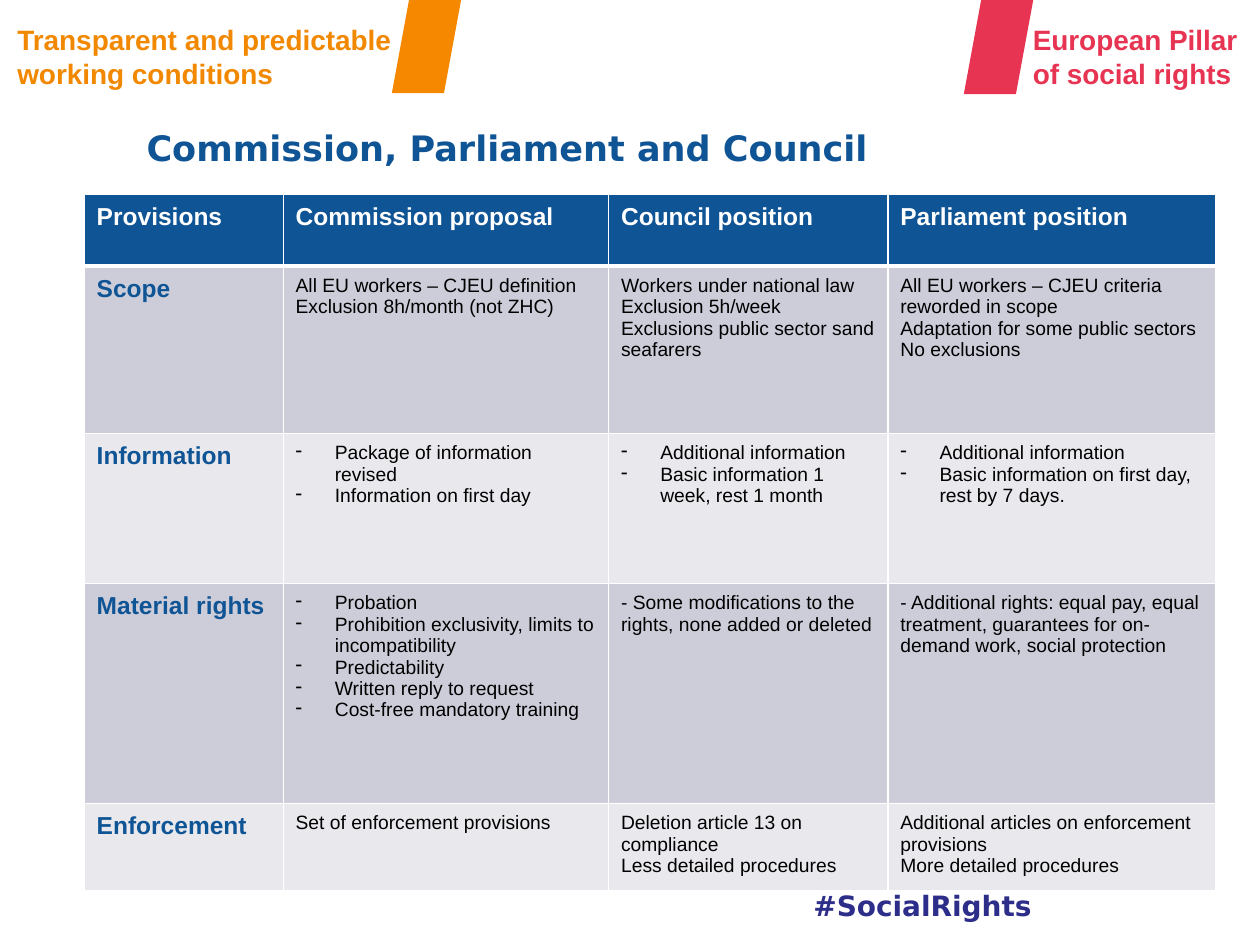
from dataclasses import dataclass

from lxml.etree import SubElement
from pptx import Presentation
from pptx.dml.color import RGBColor
from pptx.enum.shapes import MSO_SHAPE
from pptx.enum.text import MSO_ANCHOR, PP_ALIGN
from pptx.oxml.ns import qn
from pptx.util import Cm, Pt


@dataclass(frozen=True)
class Theme:
    body_font: str = "Arial"
    display_font: str = "DejaVu Sans"
    blue: str = "0F5494"
    navy: str = "2D2D8A"
    orange: str = "F18800"
    orange_bar: str = "F68800"
    red: str = "E73452"
    white: str = "FFFFFF"
    black: str = "000000"
    bands: tuple = ("CDCDDA", "E8E8ED")
    title_size: int = 20
    banner_size: int = 16
    heading_size: int = 14
    cell_size: int = 11


THEME = Theme()

TITLE = "Commission, Parliament and Council"
# text, font, colour, (left, top, width, height) in cm, wraps
LABELS = [
    ("#SocialRights", THEME.display_font, THEME.navy, (16.15, 17.78, 4.95, 0.94), False),
    ("Transparent and predictable working conditions", THEME.body_font, THEME.orange,
     (0.1, 0.33, 8.71, 1.63), True),
    ("European Pillar of social rights", THEME.body_font, THEME.red,
     (20.57, 0.33, 5, 1.63), True),
]
# left, top in cm, colour
BARS = [(7.9, -0.02, THEME.orange_bar), (19.43, 0, THEME.red)]
BAR_WIDTH, BAR_HEIGHT = 1.4, 1.9

HEADINGS = ["Provisions", "Commission proposal", "Council position", "Parliament position"]
# provision, whether each cell is a dashed list, lines of each cell
PROVISIONS = [
    ("Scope", (False, False, False), [
        ["All EU workers – CJEU definition", "Exclusion 8h/month (not ZHC)"],
        ["Workers under national law", "Exclusion 5h/week",
         "Exclusions public sector sand seafarers"],
        ["All EU workers – CJEU criteria reworded in scope",
         "Adaptation for some public sectors", "No exclusions"],
    ]),
    ("Information", (True, True, True), [
        ["Package of information revised", "Information on first day"],
        ["Additional information", "Basic information 1 week, rest 1 month"],
        ["Additional information", "Basic information on first day, rest by 7 days."],
    ]),
    ("Material rights", (True, False, False), [
        ["Probation", "Prohibition exclusivity, limits to incompatibility",
         "Predictability", "Written reply to request", "Cost-free mandatory training"],
        ["- Some modifications to the rights, none added or deleted"],
        ["- Additional rights: equal pay, equal treatment, guarantees for on-demand work, "
         "social protection"],
    ]),
    ("Enforcement", (False, False, False), [
        ["Set of enforcement provisions"],
        ["Deletion article 13 on compliance", "Less detailed procedures"],
        ["Additional articles on enforcement provisions", "More detailed procedures"],
    ]),
]
TABLE_LEFT, TABLE_TOP = 1.7, 3.91
COLUMN_WIDTHS = [4.01, 6.56, 5.63, 6.61]
ROW_HEIGHTS = [1.45, 3.38, 3.02, 4.44, 1.62]
DASH_INDENT = 0.79


def style(para, font, size, colour, bold=True):
    para.font.name = font
    para.font.size = Pt(size)
    para.font.bold = bold
    para.font.color.rgb = RGBColor.from_string(colour)


def indent(para, left, dash=False):
    """Indent a paragraph; with dash, hang a dash in the indent."""
    props = para._p.get_or_add_pPr()
    props.set("marL", str(Cm(left)))
    props.set("indent", str(-Cm(left) if dash else 0))
    if dash:
        SubElement(props, qn("a:buChar"), char="-")


def add_borders(cell, bottom_width):
    props = cell._tc.get_or_add_tcPr()
    for position, side in enumerate(("lnL", "lnR", "lnT", "lnB")):
        width = bottom_width if side == "lnB" else 1
        line = SubElement(props, qn(f"a:{side}"), w=str(Pt(width)))
        fill = SubElement(line, qn("a:solidFill"))
        SubElement(fill, qn("a:srgbClr"), val=THEME.white)
        props.insert(position, line)


def fill_cell(cell, lines, fill, size, colour, bold=True, dashed=False, bottom_width=1):
    cell.margin_left = cell.margin_right = Cm(0.25)
    cell.margin_top = cell.margin_bottom = Cm(0.18)
    cell.fill.solid()
    cell.fill.fore_color.rgb = RGBColor.from_string(fill)
    add_borders(cell, bottom_width)
    cell.text_frame.text = "\n".join(lines)
    for para in cell.text_frame.paragraphs:
        if dashed:
            indent(para, DASH_INDENT, dash=True)
        style(para, THEME.body_font, size, colour, bold)


def add_banner(page):
    for text, font, colour, place, wraps in LABELS:
        box = page.shapes.add_textbox(*map(Cm, place))
        box.text_frame.word_wrap = wraps
        box.text_frame.text = text
        style(box.text_frame.paragraphs[0], font, THEME.banner_size, colour)
    for left, top, colour in BARS:
        bar = page.shapes.add_shape(MSO_SHAPE.PARALLELOGRAM, Cm(left), Cm(top),
                                    Cm(BAR_WIDTH), Cm(BAR_HEIGHT))
        bar.shadow.inherit = False
        bar.fill.solid()
        bar.fill.fore_color.rgb = RGBColor.from_string(colour)
        bar.line.fill.background()


def set_title(page):
    title = page.shapes.title
    title.left, title.top, title.width, title.height = map(Cm, (1.7, 2.1, 22.2, 1.73))
    title.text_frame.text = TITLE
    title.text_frame.vertical_anchor = MSO_ANCHOR.MIDDLE
    para = title.text_frame.paragraphs[0]
    para.alignment = PP_ALIGN.LEFT
    indent(para, 1)
    style(para, THEME.display_font, THEME.title_size, THEME.blue)


def add_comparison(page):
    table = page.shapes.add_table(
        len(ROW_HEIGHTS), len(COLUMN_WIDTHS), Cm(TABLE_LEFT), Cm(TABLE_TOP),
        Cm(sum(COLUMN_WIDTHS)), Cm(sum(ROW_HEIGHTS))).table
    table.horz_banding = False
    for column, width in zip(table.columns, COLUMN_WIDTHS):
        column.width = Cm(width)
    for row, height in zip(table.rows, ROW_HEIGHTS):
        row.height = Cm(height)

    for column, heading in enumerate(HEADINGS):
        fill_cell(table.cell(0, column), [heading], THEME.blue,
                  THEME.heading_size, THEME.white, bottom_width=3)
    for row, (provision, dashes, positions) in enumerate(PROVISIONS, 1):
        band = THEME.bands[(row - 1) % 2]
        fill_cell(table.cell(row, 0), [provision], band, THEME.heading_size, THEME.blue)
        for column, (lines, dashed) in enumerate(zip(positions, dashes), 1):
            fill_cell(table.cell(row, column), lines, band, THEME.cell_size,
                      THEME.black, bold=False, dashed=dashed)


def main():
    deck = Presentation()
    deck.slide_width, deck.slide_height = Cm(25.4), Cm(19.05)
    page = deck.slides.add_slide(deck.slide_layouts.get_by_name("Title Only"))
    add_banner(page)
    set_title(page)
    add_comparison(page)
    deck.save("out.pptx")


if __name__ == "__main__":
    main()
